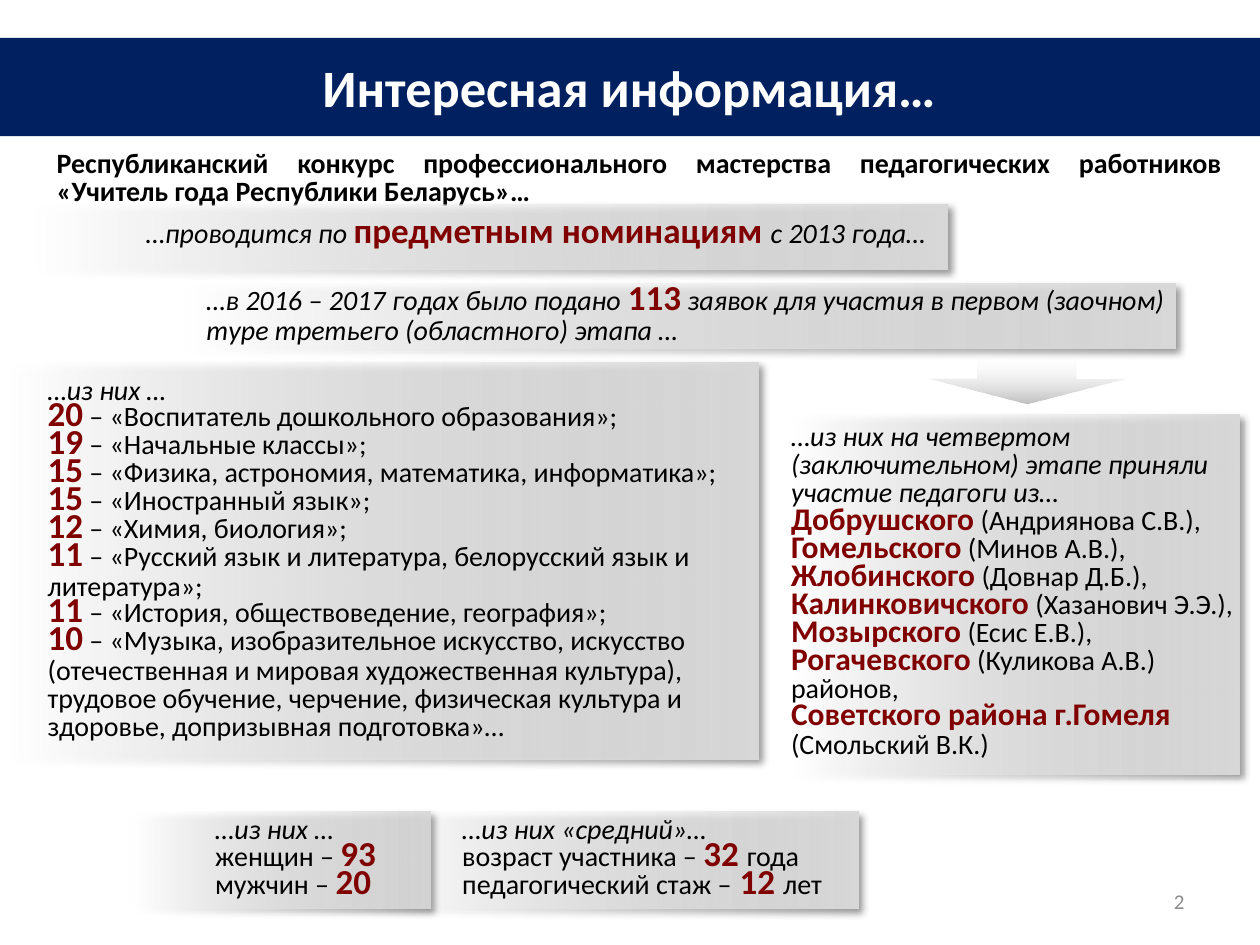
from lxml import etree
from pptx import Presentation
from pptx.dml.color import RGBColor
from pptx.enum.shapes import MSO_SHAPE
from pptx.enum.text import MSO_ANCHOR, MSO_AUTO_SIZE, PP_ALIGN
from pptx.oxml.ns import qn
from pptx.util import Inches, Pt

RECT, DOWN_ARROW = MSO_SHAPE.RECTANGLE, MSO_SHAPE.DOWN_ARROW
LEFT, CENTER, RIGHT, JUSTIFY = PP_ALIGN.LEFT, PP_ALIGN.CENTER, PP_ALIGN.RIGHT, PP_ALIGN.JUSTIFY
MIDDLE = MSO_ANCHOR.MIDDLE
FIT = MSO_AUTO_SIZE.SHAPE_TO_FIT_TEXT
NAVY = RGBColor(0x00, 0x20, 0x60)
WHITE = RGBColor(0xFF, 0xFF, 0xFF)
BLACK = RGBColor(0x00, 0x00, 0x00)
MAROON = RGBColor(0x80, 0x00, 0x00)
PANEL_GRAY = RGBColor(0xD9, 0xD9, 0xD9)
ARROW_GRAY = RGBColor(0xBF, 0xBF, 0xBF)
NUMBER_GRAY = RGBColor(0x8C, 0x8C, 0x8C)

prs = Presentation()
prs.slide_width, prs.slide_height = Inches(10), Inches(7.5)
s = prs.slides.add_slide(prs.slide_layouts[6])


def add_gradient(kind, box, color, angle):
    sp = s.shapes.add_shape(kind, *map(Inches, box))
    sp.line.fill.background()
    sp.shadow.inherit = False
    sp.fill.gradient()
    sp.fill.gradient_angle = angle
    start, end = sp.fill.gradient_stops
    start.color.rgb, end.color.rgb = color, WHITE
    start.position, end.position = 0, 1
    end_color = sp._element.spPr.findall(".//" + qn("a:srgbClr"))[-1]
    etree.SubElement(end_color, qn("a:alpha"), val="0")
    return sp


def add_text(box, lines, align, size=16, color=BLACK, bold=False, spacing=None, mark_size=20, lead_italic=False):
    tb = s.shapes.add_textbox(*map(Inches, box))
    tf = tb.text_frame
    tf.word_wrap = True
    for i, line in enumerate(lines):
        p = tf.add_paragraph() if i else tf.paragraphs[0]
        p.alignment = align
        p.line_spacing = spacing
        for j, part in enumerate(line.split("|")):
            if not part:
                continue
            marked = j % 2 == 1
            r = p.add_run()
            r.text = part
            r.font.name = "Calibri"
            r.font.size = Pt(mark_size if marked else size)
            r.font.color.rgb = MAROON if marked else color
            r.font.bold = marked or bold
            r.font.italic = lead_italic and i == 0 and not marked
    return tf


band = s.shapes.add_shape(RECT, 0, Inches(0.3), Inches(10), Inches(0.78))
band.fill.solid()
band.fill.fore_color.rgb = NAVY
band.line.fill.background()
band.shadow.inherit = False

tf = add_text((1.06, 0.39, 7.87, 0.61), ["Интересная информация…"], CENTER, 30, WHITE, True)
tf.auto_size = FIT
tf = add_text(
    (0.35, 1.15, 9.45, 0.55),
    ["Республиканский конкурс профессионального мастерства педагогических работников "
     "«Учитель года Республики Беларусь»… "],
    JUSTIFY, bold=True, spacing=Pt(16))
tf.auto_size = FIT

panels = [
    ((0.24, 1.62, 7.28, 0.52), (1.06, 1.72, 8.07, 0.33), JUSTIFY, 20, [
        "…проводится по |предметным номинациям |с 2013 года…"]),
    ((1.42, 2.25, 7.91, 0.52), (1.54, 2.25, 7.8, 0.55), JUSTIFY, 20, [
        "…в 2016 – 2017 годах было подано |113| заявок для участия в первом (заочном) "
        "туре третьего (областного) этапа …"]),
    ((0.04, 2.88, 5.98, 3.15), (0.28, 2.95, 5.74, 3.09), LEFT, 20, [
        "…из них …",
        "|20| – «Воспитатель дошкольного образования»;",
        "|19| – «Начальные классы»;",
        "|15| – «Физика, астрономия, математика, информатика»;",
        "|15| – «Иностранный язык»;",
        "|12| – «Химия, биология»;",
        "|11| – «Русский язык и литература, белорусский язык и литература»;",
        "|11| – «История, обществоведение, география»;",
        "|10| – «Музыка, изобразительное искусство, искусство (отечественная и мировая "
        "художественная культура), трудовое обучение, черчение, физическая культура и "
        "здоровье, допризывная подготовка»…"]),
    ((1.02, 6.44, 2.4, 0.77), (1.61, 6.44, 1.81, 0.77), JUSTIFY, 20, [
        "…из них …", "женщин – |93| ", "мужчин – |20"]),
    ((3, 6.44, 3.81, 0.77), (3.57, 6.44, 3.22, 0.77), JUSTIFY, 20, [
        "…из них «средний»…",
        "возраст участника – |32 |года",
        "педагогический стаж –| 12 |лет"]),
    ((6.26, 3.29, 3.58, 2.86), (6.18, 3.32, 3.74, 2.79), LEFT, 18, [
        "…из них на четвертом (заключительном) этапе приняли участие педагоги из…",
        "|Добрушского| (Андриянова С.В.),",
        "|Гомельского| (Минов А.В.),",
        "|Жлобинского| (Довнар Д.Б.),",
        "|Калинковичского| (Хазанович Э.Э.),",
        "|Мозырского| (Есис Е.В.),",
        "|Рогачевского| (Куликова А.В.) районов,",
        "|Советского района г.Гомеля |(Смольский В.К.)"]),
]
for panel_box, text_box, align, mark_size, lines in panels:
    sp = add_gradient(RECT, panel_box, PANEL_GRAY, 180)
    effects = sp._element.spPr.find(qn("a:effectLst"))
    shadow = etree.SubElement(
        effects, qn("a:outerShdw"), blurRad=str(Pt(4)), dist=str(Pt(3)),
        dir=str(45 * 60000), algn="tl", rotWithShape="0")
    shadow_color = etree.SubElement(shadow, qn("a:srgbClr"), val=str(BLACK))
    etree.SubElement(shadow_color, qn("a:alpha"), val="40000")
    tf = add_text(text_box, lines, align, spacing=Pt(16), mark_size=mark_size, lead_italic=True)
    tf.auto_size = FIT

add_gradient(DOWN_ARROW, (7.36, 2.81, 1.57, 0.39), ARROW_GRAY, 90)

tf = add_text((7.17, 6.95, 2.33, 0.4), ["2"], RIGHT, 12, NUMBER_GRAY)
tf.vertical_anchor = MIDDLE

prs.save("out.pptx")
